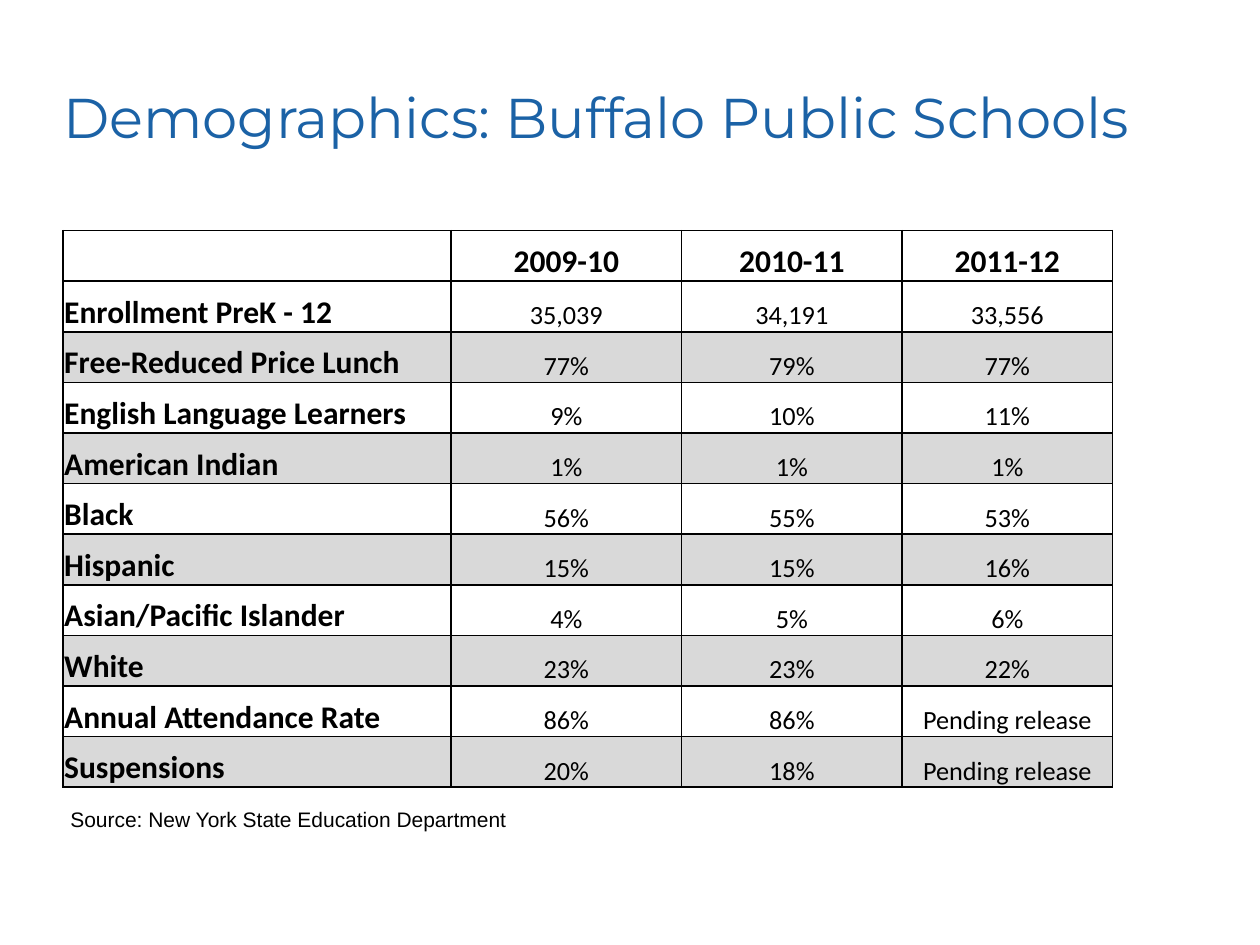
from dataclasses import dataclass

from lxml.etree import SubElement
from pptx import Presentation
from pptx.dml.color import RGBColor
from pptx.enum.text import MSO_ANCHOR, MSO_AUTO_SIZE, PP_ALIGN
from pptx.oxml.ns import qn
from pptx.util import Inches, Pt


@dataclass(frozen=True)
class Theme:
    blue: str = "1B62A6"
    black: str = "000000"
    white: str = "FFFFFF"
    gray: str = "D9D9D9"
    head: str = "Montserrat"
    body: str = "Calibri"
    note: str = "Arial"
    title: int = 32
    label: int = 18
    value: int = 15
    small: int = 12
    rule: int = 1


class Deck:
    def __init__(self, theme):
        self.theme = theme
        self.deck = Presentation()
        self.deck.slide_width = Inches(10)
        self.deck.slide_height = Inches(7.5)
        self.slide = self.deck.slides.add_slide(self.deck.slide_layouts[5])

    def style(self, para, face, size, color, bold=False, align=PP_ALIGN.LEFT):
        para.alignment = align
        para.font.name = face
        para.font.size = Pt(size)
        para.font.bold = bold
        para.font.color.rgb = RGBColor.from_string(color)

    def title(self, text, left, top, width, height):
        shape = self.slide.shapes.title
        shape.left, shape.top = Inches(left), Inches(top)
        shape.width, shape.height = Inches(width), Inches(height)
        frame = shape.text_frame
        frame.text = text
        frame.vertical_anchor = MSO_ANCHOR.MIDDLE
        frame.margin_left = frame.margin_right = 0
        frame.margin_top = frame.margin_bottom = 0
        look = self.theme
        self.style(frame.paragraphs[0], look.head, look.title, look.blue)

    def note(self, text, left, top, width, height):
        box = self.slide.shapes.add_textbox(
            Inches(left), Inches(top), Inches(width), Inches(height))
        frame = box.text_frame
        frame.text = text
        frame.word_wrap = True
        frame.auto_size = MSO_AUTO_SIZE.SHAPE_TO_FIT_TEXT
        look = self.theme
        self.style(frame.paragraphs[0], look.note, look.small, look.black)

    def border(self, cell):
        props = cell._tc.get_or_add_tcPr()
        for spot, side in enumerate(("lnL", "lnR", "lnT", "lnB")):
            line = SubElement(props, qn(f"a:{side}"), w=str(Pt(self.theme.rule)))
            fill = SubElement(line, qn("a:solidFill"))
            SubElement(fill, qn("a:srgbClr"), val=self.theme.black)
            props.insert(spot, line)

    def cell(self, cell, text, row, col):
        look = self.theme
        cell.text = text
        cell.vertical_anchor = MSO_ANCHOR.BOTTOM
        cell.margin_left = cell.margin_right = cell.margin_top = Inches(0.01)
        cell.margin_bottom = 0
        bold = row == 0 or col == 0
        self.style(cell.text_frame.paragraphs[0], look.body,
                   look.label if bold else look.value, look.black, bold,
                   PP_ALIGN.CENTER if col else PP_ALIGN.LEFT)
        shade = row > 0 and row % 2 == 0
        cell.fill.solid()
        cell.fill.fore_color.rgb = RGBColor.from_string(
            look.gray if shade else look.white)
        self.border(cell)

    def table(self, rows, widths, left, top, height):
        grid = self.slide.shapes.add_table(
            len(rows), len(widths), Inches(left), Inches(top),
            Inches(sum(widths)), Inches(height)).table
        grid.horz_banding = False
        for col, width in enumerate(widths):
            grid.columns[col].width = Inches(width)
        for row, texts in enumerate(rows):
            for col, text in enumerate(texts):
                self.cell(grid.cell(row, col), text, row, col)


ROWS = [
    ("", "2009-10", "2010-11", "2011-12"),
    ("Enrollment PreK - 12", "35,039", "34,191", "33,556"),
    ("Free-Reduced Price Lunch", "77%", "79%", "77%"),
    ("English Language Learners", "9%", "10%", "11%"),
    ("American Indian", "1%", "1%", "1%"),
    ("Black", "56%", "55%", "53%"),
    ("Hispanic", "15%", "15%", "16%"),
    ("Asian/Pacific Islander", "4%", "5%", "6%"),
    ("White", "23%", "23%", "22%"),
    ("Annual Attendance Rate", "86%", "86%", "Pending release"),
    ("Suspensions", "20%", "18%", "Pending release"),
]


def main():
    page = Deck(Theme())
    page.title("Demographics: Buffalo Public Schools", 0.5, 0.3, 9.33, 1.25)
    page.table(ROWS, (3.08, 1.83, 1.75, 1.67), 0.5, 1.83, 4.42)
    page.note("Source: New York State Education Department",
              0.46, 6.35, 8.33, 0.3)
    page.deck.save("out.pptx")


if __name__ == "__main__":
    main()
